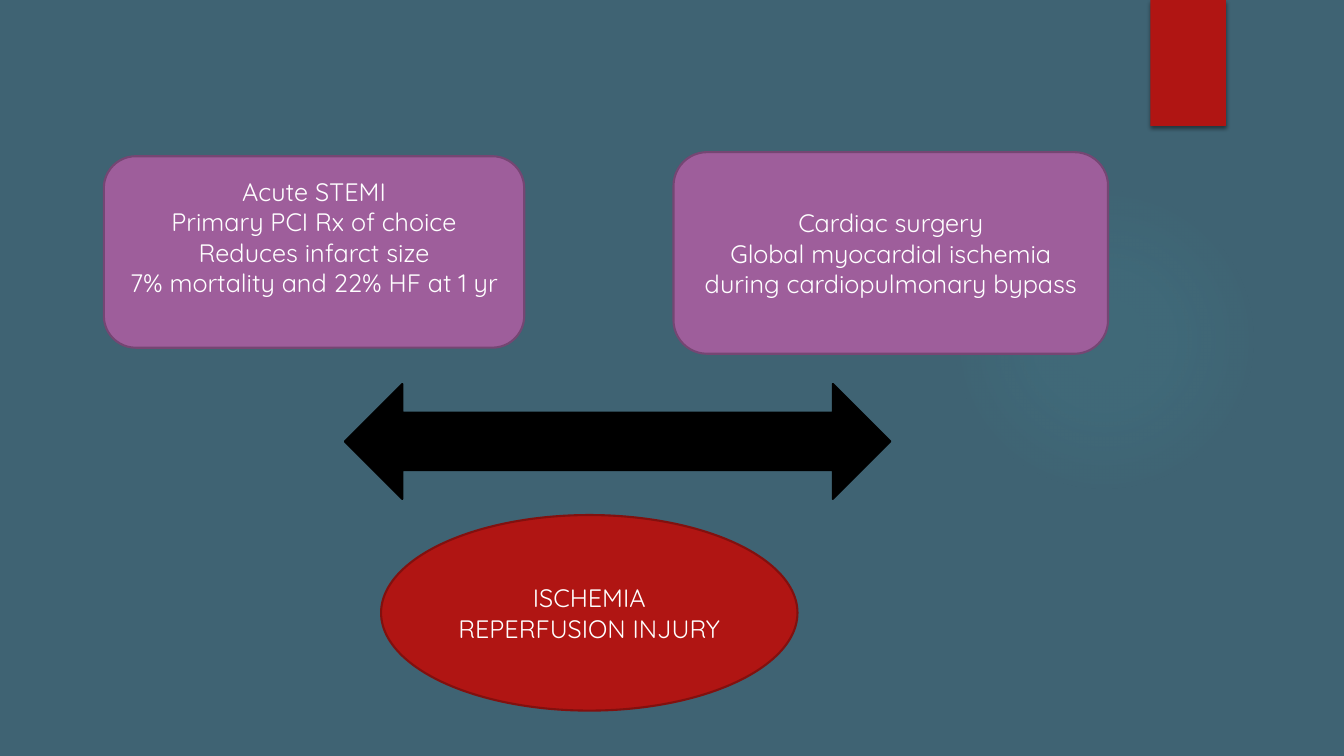
from dataclasses import dataclass

import pptx
import pptx.dml.color
import pptx.enum.shapes
import pptx.enum.text
import pptx.oxml
import pptx.oxml.ns
import pptx.util

Inches = pptx.util.Inches
SHAPES = pptx.enum.shapes.MSO_SHAPE
NS = pptx.oxml.ns.nsdecls("a")


@dataclass(frozen=True)
class Theme:
    background: str = "3F6373"
    glow: str = "50B9C1"
    red: str = "B01513"
    red_line: str = "82100E"
    purple: str = "9E5E9B"
    purple_line: str = "754673"
    black: str = "000000"
    text: str = "FFFFFF"
    font: str = "Quicksand"
    size: float = 18
    line_width: float = 1.5


THEME = Theme()


def rgb(color):
    return pptx.dml.color.RGBColor.from_string(color)


def add_figure(slide, kind, box, fill=None, line=None):
    figure = slide.shapes.add_shape(kind, *(Inches(length) for length in box))
    figure.shadow.inherit = False
    if fill:
        figure.fill.solid()
        figure.fill.fore_color.rgb = rgb(fill)
    else:
        figure.fill.background()
    if line:
        figure.line.color.rgb = rgb(line)
        figure.line.width = pptx.util.Pt(THEME.line_width)
    else:
        figure.line.fill.background()
    return figure


def write_centered(figure, lines, bottom_inset=0.05):
    frame = figure.text_frame
    frame.word_wrap = True
    frame.vertical_anchor = pptx.enum.text.MSO_ANCHOR.MIDDLE
    frame.margin_bottom = Inches(bottom_inset)
    frame.text = "\n".join(lines)
    for paragraph in frame.paragraphs:
        paragraph.alignment = pptx.enum.text.PP_ALIGN.CENTER
        paragraph.font.name = THEME.font
        paragraph.font.size = pptx.util.Pt(THEME.size)
        paragraph.font.color.rgb = rgb(THEME.text)


def add_glow(slide, box):
    glow = add_figure(slide, SHAPES.OVAL, box)
    stops = "".join(
        f'<a:gs pos="{position * 1000}"><a:srgbClr val="{THEME.glow}">'
        f'<a:alpha val="{opacity * 1000}"/></a:srgbClr></a:gs>'
        for position, opacity in ((0, 7), (36, 6), (69, 0))
    )
    gradient = pptx.oxml.parse_xml(
        f'<a:gradFill {NS}><a:gsLst>{stops}</a:gsLst><a:path path="circle">'
        '<a:fillToRect l="50000" t="50000" r="50000" b="50000"/></a:path></a:gradFill>'
    )
    properties = glow._element.spPr
    properties.replace(properties.find(pptx.oxml.ns.qn("a:noFill")), gradient)


def add_ribbon(slide, box):
    ribbon = add_figure(slide, SHAPES.RECTANGLE, box, THEME.red)
    effects = ribbon._element.spPr.find(pptx.oxml.ns.qn("a:effectLst"))
    effects.append(pptx.oxml.parse_xml(
        f'<a:outerShdw {NS} blurRad="{pptx.util.Pt(3)}" dist="{pptx.util.Pt(2)}" '
        f'dir="5400000" rotWithShape="0"><a:srgbClr val="{THEME.black}">'
        '<a:alpha val="45000"/></a:srgbClr></a:outerShdw>'
    ))


def add_setting(slide, box, lines, bottom_inset=0.05):
    setting = add_figure(slide, SHAPES.ROUNDED_RECTANGLE, box, THEME.purple, THEME.purple_line)
    write_centered(setting, lines, bottom_inset)


def add_injury(slide, box):
    injury = add_figure(slide, SHAPES.OVAL, box, THEME.red, THEME.red_line)
    write_centered(injury, ["ISCHEMIA REPERFUSION INJURY"])


def main():
    deck = pptx.Presentation()
    deck.slide_width, deck.slide_height = Inches(13.33), Inches(7.5)
    slide = deck.slides.add_slide(deck.slide_layouts[6])

    # Backdrop
    slide.background.fill.solid()
    slide.background.fill.fore_color.rgb = rgb(THEME.background)
    add_glow(slide, (9.41, 1.83, 3.08, 3.08))
    add_ribbon(slide, (11.41, 0, 0.75, 1.25))

    # Two clinical settings
    add_setting(slide, (1.03, 1.55, 4.17, 1.9), [
        "Acute STEMI",
        "Primary PCI Rx of choice",
        "Reduces infarct size",
        "7% mortality and 22% HF at 1 yr",
    ], bottom_inset=0.35)
    add_setting(slide, (6.68, 1.51, 4.31, 2), [
        "Cardiac surgery",
        "Global myocardial ischemia during cardiopulmonary bypass",
    ])

    # Shared outcome
    add_figure(slide, SHAPES.LEFT_RIGHT_ARROW, (3.42, 3.81, 5.41, 1.14), THEME.black, THEME.black)
    add_injury(slide, (3.78, 5.11, 4.13, 1.94))

    deck.save("out.pptx")


if __name__ == "__main__":
    main()
